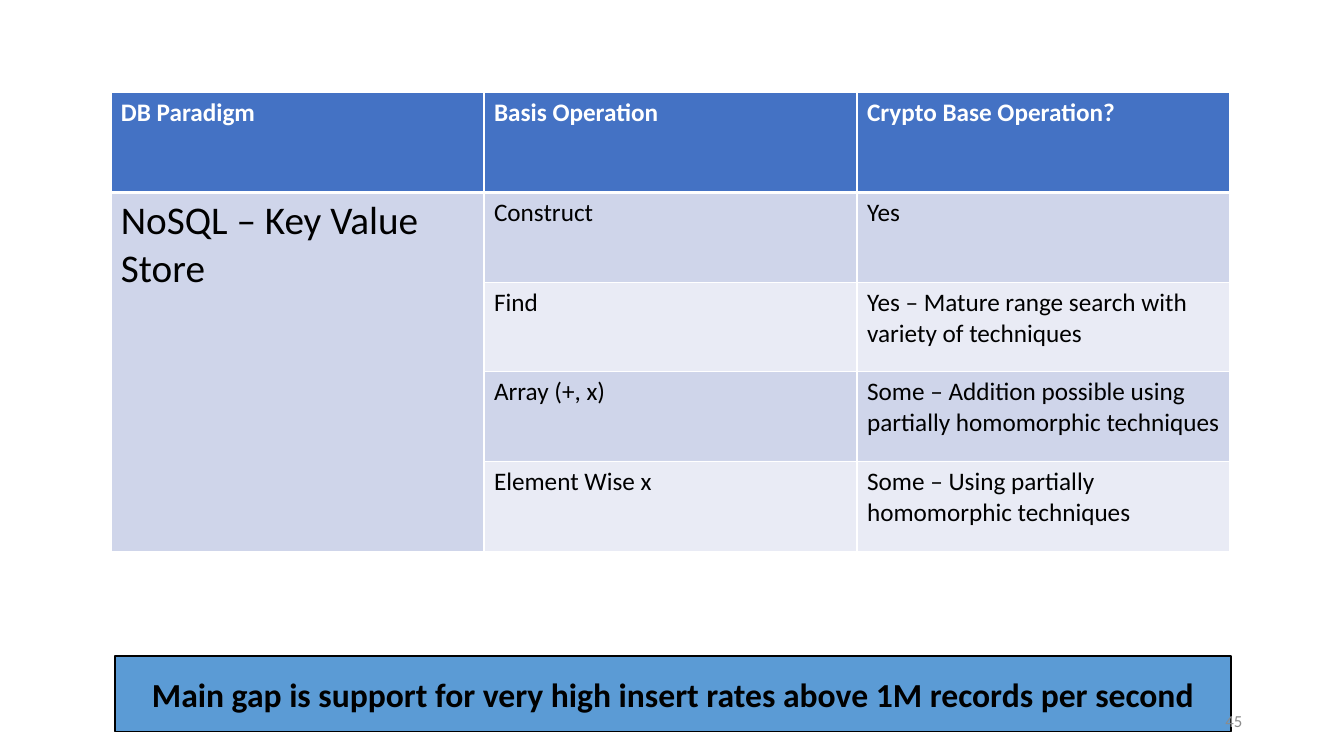
"""Build a slide on cryptographic support for key-value store operations."""
from dataclasses import dataclass

from lxml.etree import SubElement
from pptx import Presentation
from pptx.dml.color import RGBColor as Color
from pptx.enum.shapes import MSO_SHAPE as Shape
from pptx.enum.text import MSO_ANCHOR as Anchor, PP_ALIGN as Align
from pptx.oxml.ns import qn
from pptx.util import Inches, Pt

HEADER = ("DB Paradigm", "Basis Operation", "Crypto Base Operation?")
PARADIGM = "NoSQL – Key Value Store"
OPERATIONS = [
    ("Construct", "Yes"),
    ("Find", "Yes – Mature range search with variety of techniques"),
    ("Array (+, x)", "Some – Addition possible using partially homomorphic techniques"),
    ("Element Wise x", "Some – Using partially homomorphic techniques"),
]
MESSAGE = "Main gap is support for very high insert rates above 1M records per second"
PAGE_NUMBER = "45"


@dataclass(frozen=True)
class Theme:
    font: str = "Calibri"
    header: str = "4472C4"
    bands: tuple = ("CFD5EA", "E9EBF5")
    banner: str = "5B9BD5"
    light: str = "FFFFFF"
    dark: str = "000000"
    muted: str = "8C8C8C"
    body_size: int = 18
    paradigm_size: int = 28
    banner_size: int = 24
    number_size: int = 12


THEME = Theme()
LEFT, TOP, COLUMN = 1.1, 0.92, 3.7
HEADER_ROW, BODY_ROW = 0.99, 0.89


def write(frame, text, size, color, bold=False, align=Align.LEFT):
    frame.text = text
    frame.word_wrap = True
    para = frame.paragraphs[0]
    para.alignment = align
    font = para.runs[0].font
    font.name, font.size, font.bold = THEME.font, Pt(size), bold
    font.color.rgb = Color.from_string(color)


def paint(target, color):
    target.fill.solid()
    target.fill.fore_color.rgb = Color.from_string(color)


def add_borders(cell, top=1, bottom=1):
    properties = cell._tc.get_or_add_tcPr()
    for side, width in (("L", 1), ("R", 1), ("T", top), ("B", bottom)):
        line = SubElement(properties, qn(f"a:ln{side}"), w=str(Pt(width)))
        SubElement(SubElement(line, qn("a:solidFill")), qn("a:srgbClr"), val=THEME.light)


def add_operations_table(page):
    rows = [HEADER] + [(PARADIGM if index == 0 else "", *operation)
                       for index, operation in enumerate(OPERATIONS)]
    heights = [HEADER_ROW] + [BODY_ROW] * len(OPERATIONS)
    table = page.shapes.add_table(
        len(rows), len(HEADER), Inches(LEFT), Inches(TOP),
        Inches(COLUMN * len(HEADER)), Inches(sum(heights))).table
    for column in table.columns:
        column.width = Inches(COLUMN)
    for row, height in zip(table.rows, heights):
        row.height = Inches(height)
    table.cell(1, 0).merge(table.cell(len(OPERATIONS), 0))
    for r, texts in enumerate(rows):
        for c, text in enumerate(texts):
            cell = table.cell(r, c)
            add_borders(cell, top=3 if r == 1 else 1, bottom=3 if r == 0 else 1)
            paint(cell, THEME.header if r == 0 else THEME.bands[(r - 1) % 2 if c else 0])
            if text:
                size = THEME.paradigm_size if text == PARADIGM else THEME.body_size
                write(cell.text_frame, text, size,
                      THEME.dark if r else THEME.light, bold=r == 0)


def add_banner(page):
    banner = page.shapes.add_shape(
        Shape.RECTANGLE, Inches(1.14), Inches(6.51), Inches(11.07), Inches(0.75))
    banner.shadow.inherit = False
    paint(banner, THEME.banner)
    banner.line.color.rgb = Color.from_string(THEME.dark)
    banner.line.width = Pt(1)
    frame = banner.text_frame
    frame.margin_left = frame.margin_right = Inches(0.2)
    frame.vertical_anchor = Anchor.MIDDLE
    write(frame, MESSAGE, THEME.banner_size, THEME.dark, True, Align.CENTER)


def add_page_number(page):
    box = page.shapes.add_textbox(Inches(9.42), Inches(6.95), Inches(3), Inches(0.4))
    box.text_frame.vertical_anchor = Anchor.MIDDLE
    write(box.text_frame, PAGE_NUMBER, THEME.number_size, THEME.muted, align=Align.RIGHT)


def main():
    deck = Presentation()
    deck.slide_width, deck.slide_height = Inches(13.33), Inches(7.5)
    page = deck.slides.add_slide(deck.slide_layouts[6])
    add_operations_table(page)
    add_banner(page)
    add_page_number(page)
    deck.save("out.pptx")


if __name__ == "__main__":
    main()
